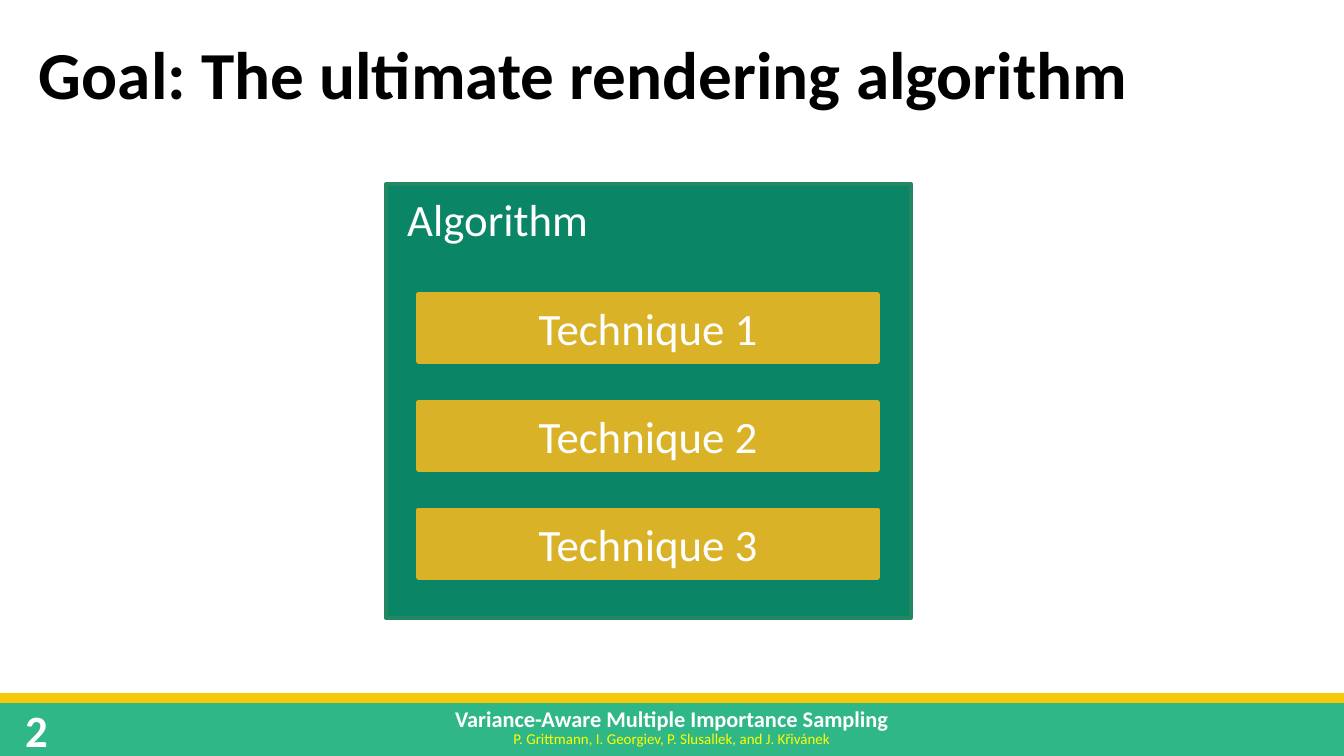
from pptx import Presentation
from pptx.dml.color import RGBColor
from pptx.enum.shapes import MSO_CONNECTOR, MSO_SHAPE
from pptx.enum.text import MSO_ANCHOR, PP_ALIGN
from pptx.oxml.ns import qn
from pptx.util import Emu, Pt
from lxml import etree

RECT, STRAIGHT = MSO_SHAPE.RECTANGLE, MSO_CONNECTOR.STRAIGHT
LEFT, CENTER = PP_ALIGN.LEFT, PP_ALIGN.CENTER
TOP, MIDDLE = MSO_ANCHOR.TOP, MSO_ANCHOR.MIDDLE

# Content
TITLE = "Goal: The ultimate rendering algorithm"
BOX_LABEL = "Algorithm"
TECHNIQUES = ["Technique 1", "Technique 2", "Technique 3"]
FOOTER_TITLE = "Variance-Aware Multiple Importance Sampling"
FOOTER_AUTHORS = "P. Grittmann, I. Georgiev, P. Slusallek, and J. Křivánek"
SLIDE_NUMBER = "2"


class Theme:
    font = "Calibri"
    black, white, yellow = "000000", "FFFFFF", "FFFF00"
    footer, rule = "30B787", "F7C80A"
    box, box_edge, technique = "0A8565", "248764", "DAB228"
    title, body, footer_title, footer_authors = 36, 24, 12, 8


# Layout in px
W, H = 1344, 756
PX = 914400 / 134.4
FOOTER_TOP, RULE_Y = 703, 698
BOX = (386, 184, 525, 434)
BAR_LEFT, BAR_TOP, BAR_W, BAR_H, BAR_STEP = 418, 294, 460, 68, 108


def px(n):
    return Emu(round(n * PX))


def rgb(value):
    return RGBColor.from_string(value)


def write(sp, text, size=Theme.body, color=Theme.white, bold=False,
          align=LEFT, anchor=TOP, wrap=True, margins=None):
    tf = sp.text_frame
    tf.word_wrap = wrap
    tf.vertical_anchor = anchor
    if margins is not None:
        tf.margin_left = tf.margin_right = px(margins)
        tf.margin_top = tf.margin_bottom = px(margins)
    p = tf.paragraphs[0]
    p.alignment = align
    r = p.add_run()
    r.text = text
    r.font.name, r.font.size, r.font.bold = Theme.font, Pt(size), bold
    r.font.color.rgb = rgb(color)


def add_text(s, box, text, **fmt):
    sp = s.shapes.add_textbox(*map(px, box))
    write(sp, text, **fmt)


def add_rect(s, box, fill, edge=None):
    sp = s.shapes.add_shape(RECT, *map(px, box))
    sp.shadow.inherit = False
    sp.fill.solid()
    sp.fill.fore_color.rgb = rgb(fill)
    if edge:
        sp.line.color.rgb = rgb(edge)
        sp.line.width = Pt(2)
    else:
        sp.line.fill.background()
    return sp


def add_rule(s, y, color, width):
    line = s.shapes.add_connector(STRAIGHT, 0, px(y), px(W), px(y))
    line.line.color.rgb = rgb(color)
    line.line.width = Pt(width)
    etree.SubElement(line._element.spPr, qn("a:effectLst"))


def main():
    prs = Presentation()
    prs.slide_width, prs.slide_height = px(W), px(H)
    s = prs.slides.add_slide(prs.slide_layouts[6])

    # Footer
    add_rect(s, (0, FOOTER_TOP, W, H - FOOTER_TOP), Theme.footer)
    add_text(s, (38, 723, 1268, 32), FOOTER_AUTHORS, align=CENTER,
             size=Theme.footer_authors, color=Theme.yellow)
    add_text(s, (38, 699, 1268, 40), FOOTER_TITLE, align=CENTER,
             size=Theme.footer_title, bold=True)
    add_rule(s, RULE_Y, Theme.rule, 5)
    add_text(s, (12, 710, 124, 40), SLIDE_NUMBER, bold=True, anchor=MIDDLE)

    # Title
    add_text(s, (39, 32, 1145, 94), TITLE, size=Theme.title,
             color=Theme.black, bold=True, margins=0)

    # Algorithm box with its techniques
    add_rect(s, BOX, Theme.box, Theme.box_edge)
    for i, name in enumerate(TECHNIQUES):
        bar = (BAR_LEFT, BAR_TOP + i * BAR_STEP, BAR_W, BAR_H)
        sp = add_rect(s, bar, Theme.technique, Theme.technique)
        write(sp, name, align=CENTER, anchor=MIDDLE)
    add_text(s, (394, 185, 210, 67), BOX_LABEL, wrap=False)

    prs.save("out.pptx")


if __name__ == "__main__":
    main()
